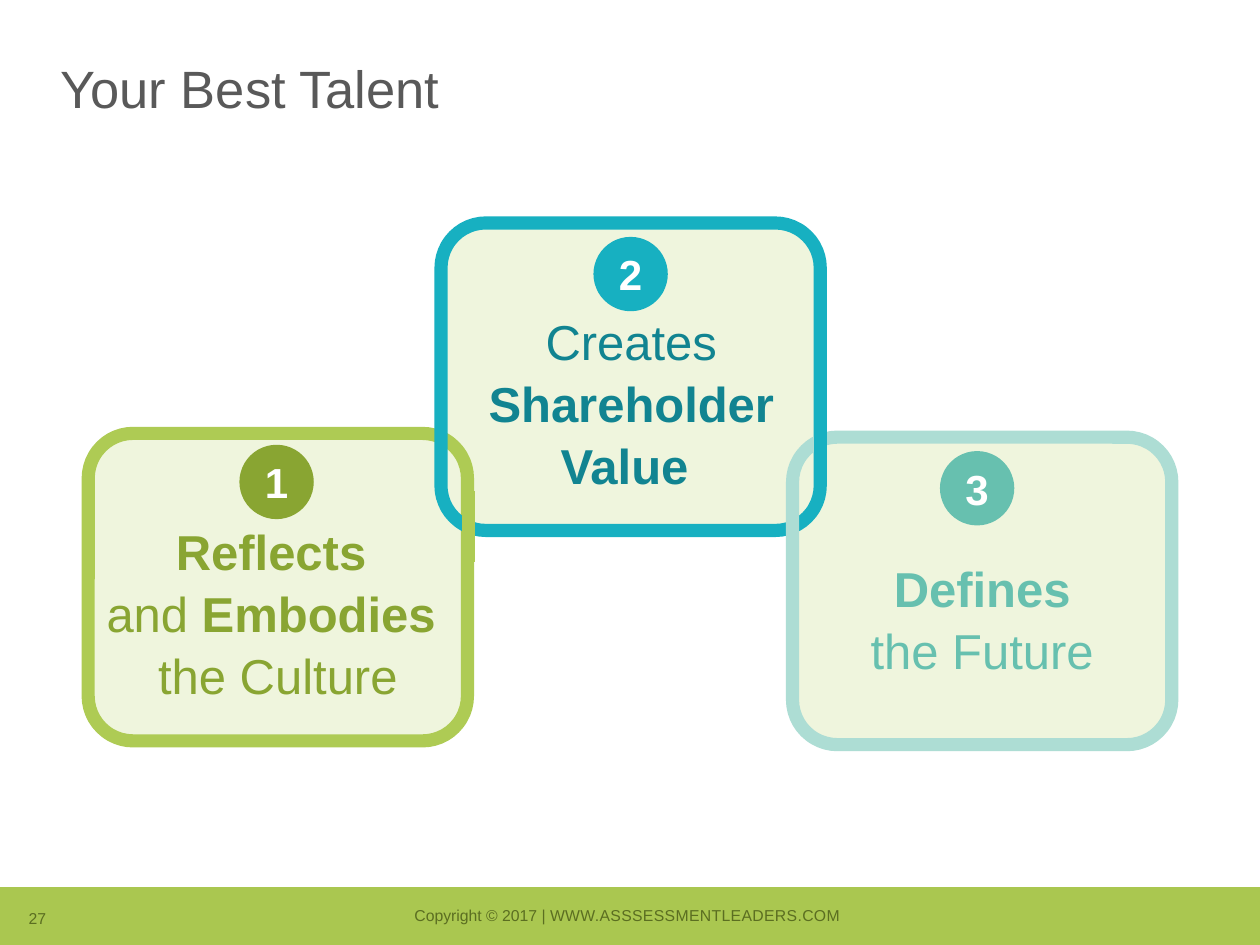
"""Build the 'Your Best Talent' slide with three linked, numbered cards."""
import pptx
import pptx.dml.color
import pptx.enum.shapes
import pptx.enum.text
import pptx.oxml
import pptx.oxml.ns
import pptx.util

Inches, Pt = pptx.util.Inches, pptx.util.Pt
ALIGN = pptx.enum.text.PP_ALIGN
ANCHOR = pptx.enum.text.MSO_ANCHOR
SHAPE = pptx.enum.shapes.MSO_SHAPE


def rgb(value):
    return pptx.dml.color.RGBColor.from_string(value)


class Deck:
    font = "Arial"
    card_fill = "EFF5DD"
    card_size = (3.01, 2.44)
    badge_size = 0.59
    border = 7.5

    def __init__(self, width, height):
        self.prs = pptx.Presentation()
        self.prs.slide_width, self.prs.slide_height = Inches(width), Inches(height)
        self.s = self.prs.slides.add_slide(self.prs.slide_layouts[5])

    def run(self, p, text, size, color, bold=False, spacing=None):
        r = p.add_run()
        r.text = text
        r.font.name, r.font.size, r.font.bold = self.font, Pt(size), bold
        r.font.color.rgb = rgb(color)
        if spacing:
            r._r.get_or_add_rPr().set("spc", str(spacing))

    def title(self, text, x, y, w, h):
        sp = self.s.shapes.title
        sp.left, sp.top, sp.width, sp.height = map(Inches, (x, y, w, h))
        tf = sp.text_frame
        tf.auto_size = pptx.enum.text.MSO_AUTO_SIZE.NONE
        tf.vertical_anchor, tf.margin_top = ANCHOR.TOP, Inches(0.08)
        p = tf.paragraphs[0]
        p.alignment, p.line_spacing = ALIGN.LEFT, 0.9
        self.run(p, text, 30, "595959")

    def shape(self, kind, x, y, w, h, fill=None, line=None):
        sp = self.s.shapes.add_shape(kind, *map(Inches, (x, y, w, h)))
        sp.shadow.inherit = False
        if fill:
            sp.fill.solid()
            sp.fill.fore_color.rgb = rgb(fill)
        else:
            sp.fill.background()
        if line:
            sp.line.color.rgb, sp.line.width = rgb(line), Pt(self.border)
        else:
            sp.line.fill.background()
        return sp

    def card(self, x, y, fill=None, line=None):
        sp = self.shape(SHAPE.ROUNDED_RECTANGLE, x, y, *self.card_size, fill, line)
        sp.adjustments[0] = 0.146

    def overlap(self, x, y, length, color):
        cn = self.s.shapes.add_connector(
            pptx.enum.shapes.MSO_CONNECTOR.STRAIGHT,
            *map(Inches, (x, y, x, y + length)))
        cn.line.color.rgb, cn.line.width = rgb(color), Pt(self.border)
        cn._element.spPr.append(pptx.oxml.parse_xml(
            "<a:effectLst %s/>" % pptx.oxml.ns.nsdecls("a")))

    def text_box(self, x, y, w, h, wrap=True, anchor=ANCHOR.TOP, align=ALIGN.CENTER):
        tf = self.s.shapes.add_textbox(*map(Inches, (x, y, w, h))).text_frame
        tf.word_wrap, tf.vertical_anchor = wrap, anchor
        p = tf.paragraphs[0]
        p.alignment = align
        return p

    def caption(self, box, lines, color):
        p = self.text_box(*box)
        p.line_spacing = 1.05
        for i, line in enumerate(lines):
            if i:
                p.add_line_break()
            for text, bold in line:
                self.run(p, text, 28, color, bold)

    def badge(self, x, y, number, color):
        sp = self.shape(SHAPE.OVAL, x, y, self.badge_size, self.badge_size, color)
        tf = sp.text_frame
        tf.margin_left = tf.margin_right = 0
        tf.vertical_anchor = ANCHOR.MIDDLE
        p = tf.paragraphs[0]
        p.alignment = ALIGN.CENTER
        self.run(p, str(number), 24, "FFFFFF", True)

    def footer(self, number, copyright_text, site):
        color = "5B6E21"
        self.shape(SHAPE.RECTANGLE, 0, 7.04, 10, 0.46, "AAC750")
        p = self.text_box(3.17, 7.14, 3.65, 0.25, False, ANCHOR.BOTTOM)
        self.run(p, copyright_text, 9, color)
        self.run(p, site, 9, color, spacing=20)
        p = self.text_box(0.13, 7.16, 0.36, 0.25, False, ANCHOR.BOTTOM, ALIGN.LEFT)
        self.run(p, str(number), 9, color)


CARDS = [
    dict(at=(0.7, 3.44), line="AECB54", text="89A532", badge_color="89A532",
         badge=(1.9, 3.53), box=(0.71, 4.07, 2.99, 1.67),
         lines=[[("Reflects ", True)],
                [("and ", False), ("Embodies ", True)],
                [("the Culture", False)]]),
    dict(at=(3.5, 1.77), line="17B0C1", text="118491", badge_color="17B0C1",
         badge=(4.71, 1.88), box=(3.59, 2.4, 2.84, 1.67),
         lines=[[("Creates", False)], [("Shareholder", True)], [("Value ", True)]]),
    dict(at=(6.29, 3.47), line="ADDDD4", text="67C0AF", badge_color="67C0AF",
         badge=(7.46, 3.58), box=(6.66, 4.36, 2.27, 1.15),
         lines=[[("Defines", True)], [("the Future", False)]]),
]


def main():
    deck = Deck(10, 7.5)
    deck.footer(27, "Copyright © 2017 | ", "WWW.ASSSESSMENTLEADERS.COM ")
    deck.title("Your Best Talent", 0.38, 0.42, 9.25, 0.83)
    for card in CARDS:
        deck.card(*card["at"], fill=deck.card_fill)
    for card in CARDS:
        deck.card(*card["at"], line=card["line"])
    deck.overlap(6.51, 3.27, 0.56, CARDS[1]["line"])
    deck.overlap(3.72, 3.9, 0.56, CARDS[0]["line"])
    for number, card in enumerate(CARDS, 1):
        deck.caption(card["box"], card["lines"], card["text"])
        deck.badge(*card["badge"], number, card["badge_color"])
    deck.prs.save("out.pptx")


if __name__ == "__main__":
    main()
